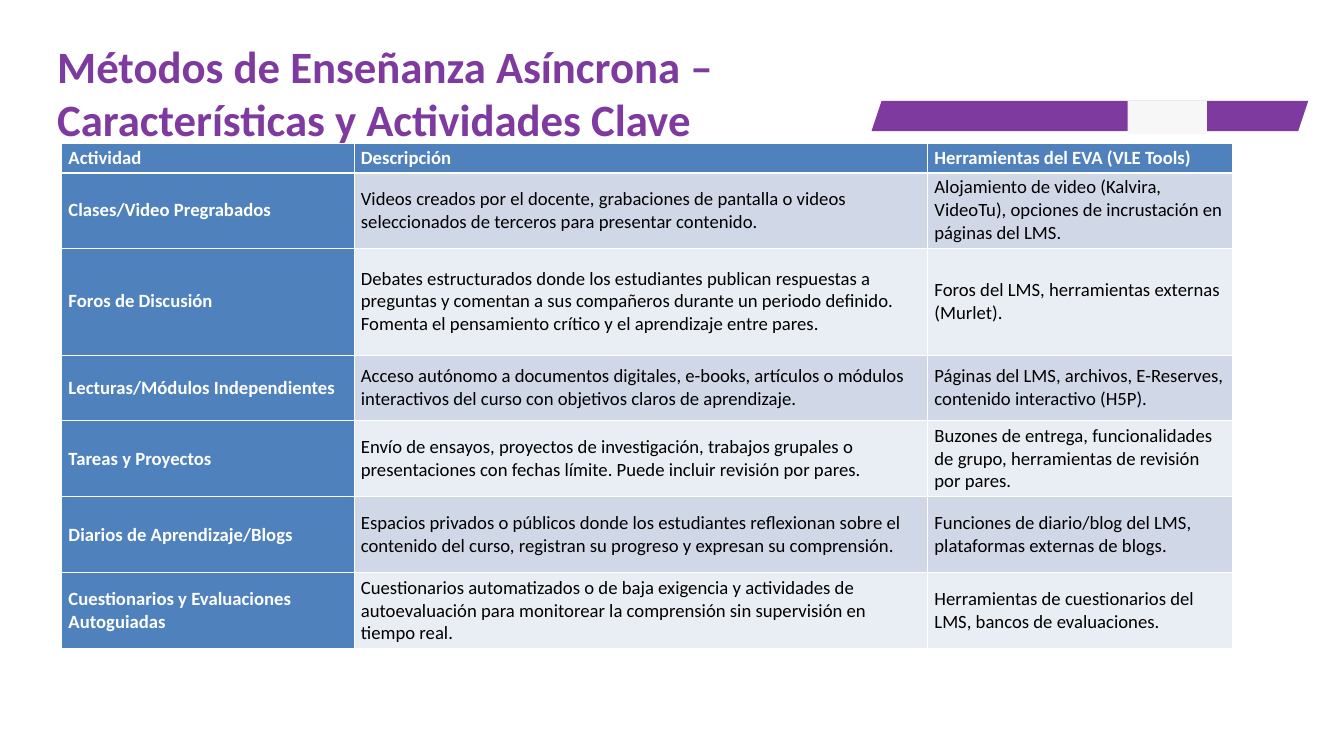
from pptx import Presentation
from pptx.dml.color import RGBColor
from pptx.enum.shapes import MSO_SHAPE
from pptx.enum.text import MSO_ANCHOR, MSO_AUTO_SIZE, PP_ALIGN
from pptx.oxml import parse_xml
from pptx.oxml.ns import nsdecls
from pptx.util import Pt

PURPLE = RGBColor(0x7F, 0x3A, 0xA0)
PALE_GRAY = RGBColor(0xF7, 0xF7, 0xF7)
BLUE = RGBColor(0x4F, 0x81, 0xBD)
BAND_DARK = RGBColor(0xD0, 0xD8, 0xE8)
BAND_LIGHT = RGBColor(0xE9, 0xED, 0xF4)
WHITE = RGBColor(0xFF, 0xFF, 0xFF)
BLACK = RGBColor(0, 0, 0)
FONT = "Calibri"

COLUMN_WIDTHS = [313.3, 614.5, 326.2]
ROW_HEIGHTS = [26, 59, 114.5, 70.5, 81.4, 81.4, 81.4]
ROWS = [
    ("Actividad", "Descripción", "Herramientas del EVA (VLE Tools)"),
    ("Clases/Video Pregrabados",
     "Videos creados por el docente, grabaciones de pantalla o videos seleccionados de terceros "
     "para presentar contenido.",
     "Alojamiento de video (Kalvira, VideoTu), opciones de incrustación en páginas del LMS."),
    ("Foros de Discusión",
     "Debates estructurados donde los estudiantes publican respuestas a preguntas y comentan a sus "
     "compañeros durante un periodo definido. Fomenta el pensamiento crítico y el aprendizaje "
     "entre pares.",
     "Foros del LMS, herramientas externas (Murlet)."),
    ("Lecturas/Módulos Independientes",
     "Acceso autónomo a documentos digitales, e-books, artículos o módulos interactivos del curso "
     "con objetivos claros de aprendizaje.",
     "Páginas del LMS, archivos, E-Reserves, contenido interactivo (H5P)."),
    ("Tareas y Proyectos",
     "Envío de ensayos, proyectos de investigación, trabajos grupales o presentaciones con fechas "
     "límite. Puede incluir revisión por pares.",
     "Buzones de entrega, funcionalidades de grupo, herramientas de revisión por pares."),
    ("Diarios de Aprendizaje/Blogs",
     "Espacios privados o públicos donde los estudiantes reflexionan sobre el contenido del curso, "
     "registran su progreso y expresan su comprensión.",
     "Funciones de diario/blog del LMS, plataformas externas de blogs."),
    ("Cuestionarios y Evaluaciones Autoguiadas",
     "Cuestionarios automatizados o de baja exigencia y actividades de autoevaluación para "
     "monitorear la comprensión sin supervisión en tiempo real.",
     "Herramientas de cuestionarios del LMS, bancos de evaluaciones."),
]


def style_text(paragraph, size, color, bold):
    paragraph.alignment = PP_ALIGN.LEFT
    font = paragraph.font
    font.name, font.size, font.bold = FONT, Pt(size), bold
    font.color.rgb = color


def add_borders(cell, widths):
    properties = cell._tc.get_or_add_tcPr()
    for side, width in widths.items():
        properties.append(parse_xml(
            f'<a:ln{side} {nsdecls("a")} w="{Pt(width)}"><a:solidFill>'
            f'<a:srgbClr val="{WHITE}"/></a:solidFill></a:ln{side}>'))


deck = Presentation()
deck.slide_width, deck.slide_height = Pt(1440), Pt(810)
page = deck.slides.add_slide(deck.slide_layouts[5])

# Title
title = page.shapes.title
title.left, title.top, title.width, title.height = Pt(54), Pt(33.8), Pt(869.8), Pt(105)
frame = title.text_frame
frame.text = "Métodos de Enseñanza Asíncrona – Características y Actividades Clave"
frame.word_wrap = True
frame.auto_size = MSO_AUTO_SIZE.NONE
frame.vertical_anchor = MSO_ANCHOR.TOP
frame.margin_left = frame.margin_right = frame.margin_top = frame.margin_bottom = Pt(7.2)
style_text(frame.paragraphs[0], 48, PURPLE, True)

# Slanted ribbon with a pale block across it
builder = page.shapes.build_freeform(Pt(944.6), Pt(108))
builder.add_line_segments([(Pt(1401.8), Pt(108)), (Pt(1391), Pt(140.4)), (Pt(933.8), Pt(140.4))])
ribbon = builder.convert_to_shape()
block = page.shapes.add_shape(MSO_SHAPE.RECTANGLE, Pt(1208.2), Pt(108), Pt(85), Pt(36))
for shape, color in ((ribbon, PURPLE), (block, PALE_GRAY)):
    shape.shadow.inherit = False
    shape.fill.solid()
    shape.fill.fore_color.rgb = color
    shape.line.fill.background()

# Table of activities
table = page.shapes.add_table(len(ROWS), len(COLUMN_WIDTHS), Pt(66.2), Pt(153.4),
                              Pt(sum(COLUMN_WIDTHS)), Pt(sum(ROW_HEIGHTS))).table
table.first_col = True
for column, width in zip(table.columns, COLUMN_WIDTHS):
    column.width = Pt(width)
for row, height in zip(table.rows, ROW_HEIGHTS):
    row.height = Pt(height)

for row_index, texts in enumerate(ROWS):
    for column_index, text in enumerate(texts):
        cell = table.cell(row_index, column_index)
        heading = row_index == 0 or column_index == 0
        band = BAND_DARK if row_index % 2 else BAND_LIGHT
        cell.text = text
        cell.vertical_anchor = MSO_ANCHOR.MIDDLE
        style_text(cell.text_frame.paragraphs[0], 20, WHITE if heading else BLACK, heading)
        # The rule under the header row is thicker
        add_borders(cell, {"L": 1, "R": 1, "T": 3 if row_index == 1 else 1,
                           "B": 3 if row_index == 0 else 1})
        cell.fill.solid()
        cell.fill.fore_color.rgb = BLUE if heading else band

deck.save("out.pptx")
